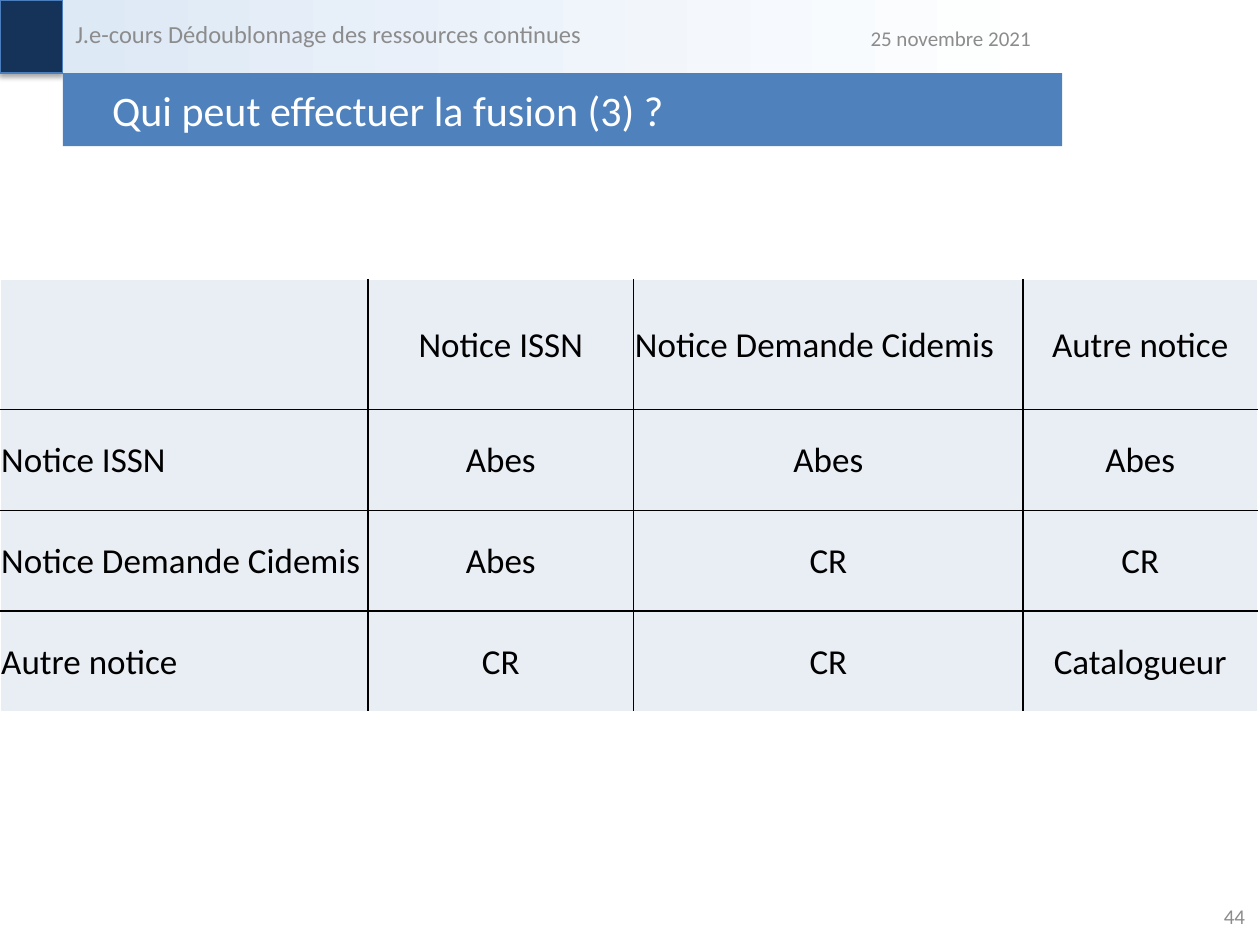
"""Build the slide on who may merge duplicate records."""
from lxml import etree
from pptx import Presentation
from pptx import util as u
from pptx.dml import color
from pptx.enum import shapes, text
from pptx.oxml import ns

TITLE = ("Qui peut effectuer la fusion (3) ?", (0.5, 0.58, 7.93, 0.58))
LABELS = [
    ("25 novembre 2021", (6.67, 0.1, 1.61, 0.4), 12, "r"),
    ("44", (9.5, 7.07, 0.48, 0.4), 12, "r"),
    ("J.e-cours Dédoublonnage des ressources continues", (0.5, 0, 4.77, 0.54), 14, "l"),
]
ROWS = [
    ("", "Notice ISSN", "Notice Demande Cidemis", "Autre notice"),
    ("Notice ISSN", "Abes", "Abes", "Abes"),
    ("Notice Demande Cidemis", "Abes", "CR", "CR"),
    ("Autre notice", "CR", "CR", "Catalogueur"),
]
LEFT_CELLS = {(0, 2), (1, 0), (2, 0), (3, 0)}
COLUMN_WIDTHS = (2.92, 2.11, 3.09, 1.86)
ROW_HEIGHTS = (1.03, 0.8, 0.8, 0.8)
ALIGN = {"l": text.PP_ALIGN.LEFT, "c": text.PP_ALIGN.CENTER, "r": text.PP_ALIGN.RIGHT}


def rgb(value):
    return color.RGBColor.from_string(value)


def write(frame, words, size, tint, align="l"):
    frame.text = words
    para = frame.paragraphs[0]
    para.alignment = ALIGN[align]
    para.font.size = u.Pt(size)
    for span in para.runs:
        span.font.name = "Calibri"
        span.font.size = u.Pt(size)
        span.font.color.rgb = rgb(tint)


def add_band(page, place):
    band = page.shapes.add_shape(shapes.MSO_SHAPE.RECTANGLE, *map(u.Inches, place))
    band.shadow.inherit = False
    band.line.fill.background()
    return band


def add_corner(page):
    corner = add_band(page, (0, 0, 0.5, 0.58))
    corner.fill.solid()
    corner.fill.fore_color.rgb = rgb("153258")
    corner.line.color.rgb = rgb("4B7EBC")
    corner.line.width = u.Pt(0.75)
    effects = corner._element.spPr.find(ns.qn("a:effectLst"))
    shadow = etree.SubElement(effects, ns.qn("a:outerShdw"), blurRad=str(u.Pt(3.1)),
                              dist=str(u.Pt(1.8)), dir="5400000", rotWithShape="0")
    black = etree.SubElement(shadow, ns.qn("a:srgbClr"), val="000000")
    etree.SubElement(black, ns.qn("a:alpha"), val="35000")


def add_header(page):
    add_corner(page)
    header = add_band(page, (0.5, 0, 7.93, 0.58))
    header.fill.gradient()
    header.fill.gradient_angle = 0
    for stop, tint in zip(header.fill.gradient_stops, ("DEE9F6", "FFFFFF")):
        stop.color.rgb = rgb(tint)
    words, place = TITLE
    title = add_band(page, place)
    title.fill.solid()
    title.fill.fore_color.rgb = rgb("4F81BD")
    title.text_frame.margin_left = u.Inches(0.39)
    title.text_frame.vertical_anchor = text.MSO_ANCHOR.MIDDLE
    write(title.text_frame, words, 24, "FFFFFF")


def add_label(page, words, place, size, align):
    box = page.shapes.add_textbox(*map(u.Inches, place))
    box.text_frame.word_wrap = True
    box.text_frame.vertical_anchor = text.MSO_ANCHOR.MIDDLE
    write(box.text_frame, words, size, "8C8C8C", align)


def add_border(cell, side):
    line = etree.SubElement(cell._tc.get_or_add_tcPr(), ns.qn(f"a:ln{side}"), w=str(u.Pt(1)))
    fill = etree.SubElement(line, ns.qn("a:solidFill"))
    etree.SubElement(fill, ns.qn("a:srgbClr"), val="000000")


def add_grid(page):
    last_row, last_column = len(ROWS) - 1, len(COLUMN_WIDTHS) - 1
    size = (sum(COLUMN_WIDTHS), sum(ROW_HEIGHTS))
    grid = page.shapes.add_table(len(ROWS), len(COLUMN_WIDTHS),
                                 *map(u.Inches, (0, 2.22, *size))).table
    grid.first_row = grid.horz_banding = False
    for column, width in zip(grid.columns, COLUMN_WIDTHS):
        column.width = u.Inches(width)
    for row, height in zip(grid.rows, ROW_HEIGHTS):
        row.height = u.Inches(height)
    for r, row in enumerate(ROWS):
        for c, words in enumerate(row):
            cell = grid.cell(r, c)
            inner = {"L": c > 0, "R": c < last_column, "T": r > 0, "B": r < last_row}
            for side, shown in inner.items():
                if shown:
                    add_border(cell, side)
            cell.fill.solid()
            cell.fill.fore_color.rgb = rgb("E9EDF4")
            cell.margin_left = cell.margin_right = cell.margin_top = u.Inches(0.01)
            cell.margin_bottom = 0
            cell.vertical_anchor = text.MSO_ANCHOR.MIDDLE
            write(cell.text_frame, words, 20, "000000", "l" if (r, c) in LEFT_CELLS else "c")


def main():
    deck = Presentation()
    deck.slide_width, deck.slide_height = u.Inches(10), u.Inches(7.5)
    page = deck.slides.add_slide(deck.slide_layouts[6])
    add_header(page)
    add_grid(page)
    for label in LABELS:
        add_label(page, *label)
    deck.save("out.pptx")


if __name__ == "__main__":
    main()
